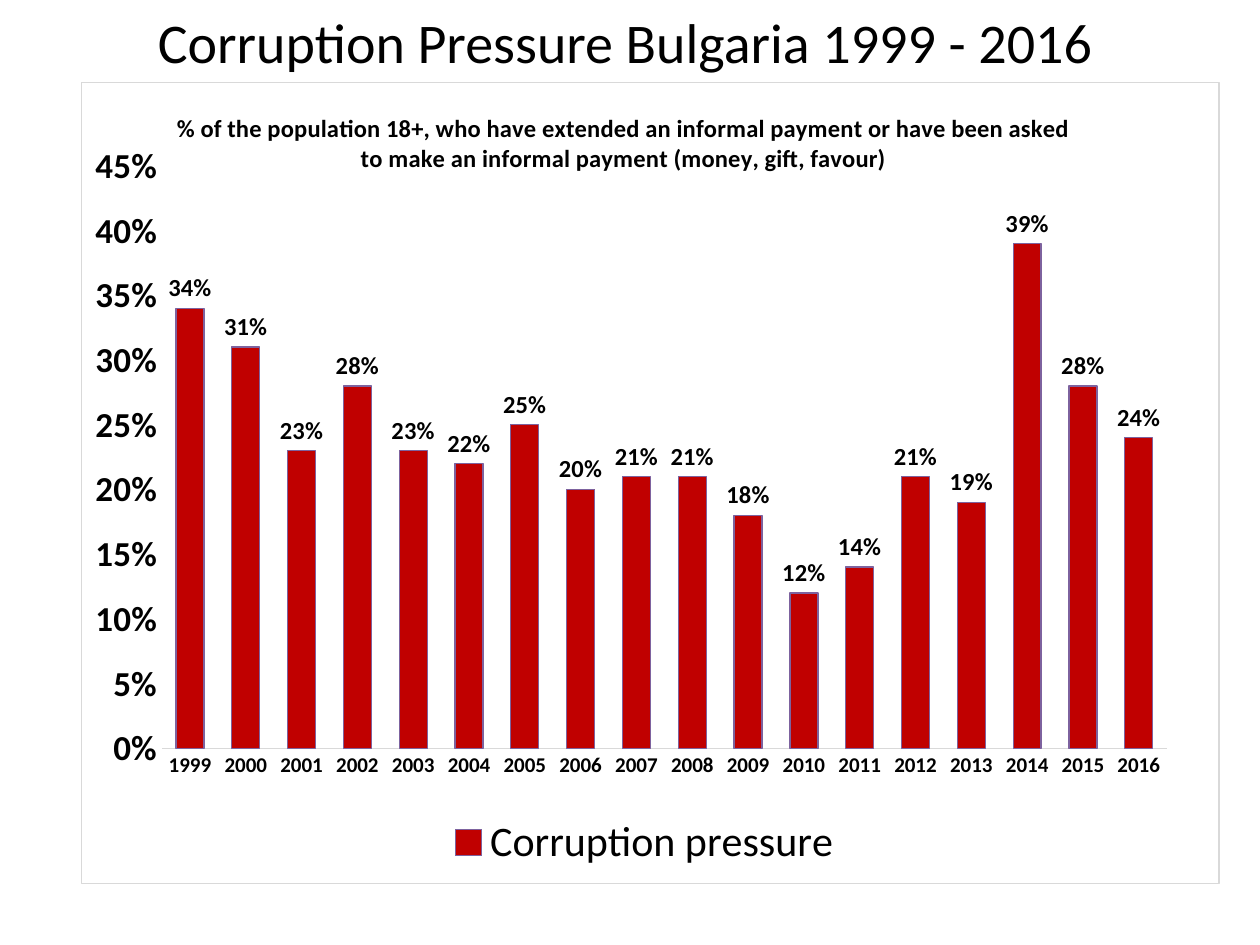
from lxml import etree
from pptx import Presentation
from pptx.chart.data import CategoryChartData
from pptx.dml.color import RGBColor
from pptx.enum import chart as ch, text
from pptx.oxml import parse_xml
from pptx.oxml.ns import nsdecls, qn
from pptx.util import Inches, Pt

FONT = "Calibri"
BLACK, GREY, RED, PURPLE = "000000", "D9D9D9", "C00000", "7D629E"
YEARS = [str(year) for year in range(1999, 2017)]
PRESSURE = [0.34, 0.31, 0.23, 0.28, 0.23, 0.22, 0.25, 0.20, 0.21,
            0.21, 0.18, 0.12, 0.14, 0.21, 0.19, 0.39, 0.28, 0.24]
QUESTION = ("% of the population 18+, who have extended an informal payment or have "
            "been asked to make an informal payment (money, gift, favour)")


def color(hex_code):
    return RGBColor.from_string(hex_code)


def set_font(font, size, bold=False):
    font.name = FONT
    font.size = Pt(size)
    font.bold = bold
    font.color.rgb = color(BLACK)


def set_line(line, hex_code):
    line.color.rgb = color(hex_code)
    line.width = Pt(0.75)


def set_layout(parent, after, target=None, **fractions):
    """Place a chart part by fractions of the chart; after is its preceding sibling."""
    for old in parent.findall(qn("c:layout")):
        parent.remove(old)
    layout = parse_xml(f"<c:layout {nsdecls('c')}><c:manualLayout/></c:layout>")
    manual = layout[0]

    def add(tag, value):
        etree.SubElement(manual, qn(f"c:{tag}")).set("val", str(value))

    if target:
        add("layoutTarget", target)
    for mode in ("xMode", "yMode"):
        add(mode, "edge")
    for tag, value in fractions.items():
        add(tag, value)
    position = 0 if after is None else parent.index(parent.find(qn(after))) + 1
    parent.insert(position, layout)


def add_title(slide, left, top, width, height):
    title = slide.shapes.title
    title.left, title.top, title.width, title.height = left, top, width, height
    frame = title.text_frame
    frame.vertical_anchor = text.MSO_ANCHOR.MIDDLE
    paragraph = frame.paragraphs[0]
    paragraph.alignment = text.PP_ALIGN.CENTER
    run = paragraph.add_run()
    run.text = "Corruption Pressure Bulgaria 1999 - 2016"
    set_font(run.font, 32)


def add_pressure_chart(slide, left, top, width, height):
    data = CategoryChartData(number_format="0%")
    data.categories = YEARS
    data.add_series("Corruption pressure", PRESSURE)
    chart = slide.shapes.add_chart(
        ch.XL_CHART_TYPE.COLUMN_CLUSTERED, left, top, width, height, data).chart
    set_font(chart.font, 11)

    # Chart heading
    chart.has_title = True
    heading = chart.chart_title
    run = heading.text_frame.paragraphs[0].add_run()
    run.text = QUESTION
    set_font(run.font, 14, bold=True)
    set_layout(heading._element, "c:tx", x=0.08, y=0.03)

    # Columns and their labels
    plot = chart.plots[0]
    plot.gap_width, plot.overlap, plot.vary_by_categories = 100, -24, False
    series = plot.series[0]
    series.format.fill.solid()
    series.format.fill.fore_color.rgb = color(RED)
    set_line(series.format.line, PURPLE)
    labels = series.data_labels
    labels.show_value = True
    labels.position = ch.XL_LABEL_POSITION.OUTSIDE_END
    labels.number_format, labels.number_format_is_linked = "0%", False
    set_font(labels.font, 14, bold=True)

    # Axes
    years, shares = chart.category_axis, chart.value_axis
    for axis, size in ((years, 12), (shares, 20)):
        axis.major_tick_mark = axis.minor_tick_mark = ch.XL_TICK_MARK.NONE
        axis.has_major_gridlines = False
        set_font(axis.tick_labels.font, size, bold=True)
    set_line(years.format.line, GREY)
    shares.format.line.fill.background()
    shares.minimum_scale, shares.maximum_scale, shares.major_unit = 0, 0.45, 0.05
    shares.tick_labels.number_format = "0%"
    shares.tick_labels.number_format_is_linked = False
    plot_area = chart._chartSpace.find(qn("c:chart")).find(qn("c:plotArea"))
    set_layout(plot_area, None, "inner", x=0.071, y=0.104, w=0.883, h=0.727)

    # Legend
    chart.has_legend = True
    legend = chart.legend
    legend.position = ch.XL_LEGEND_POSITION.RIGHT
    legend.include_in_layout = False
    set_font(legend.font, 24)
    set_layout(legend._element, "c:legendPos", x=0.32, y=0.92, w=0.35, h=0.07)

    # Border around the chart
    border = parse_xml(
        f'<c:spPr {nsdecls("c", "a")}><a:noFill/><a:ln w="{Pt(0.75)}"><a:solidFill>'
        f'<a:srgbClr val="{GREY}"/></a:solidFill></a:ln></c:spPr>')
    chart._chartSpace.find(qn("c:chart")).addnext(border)


def main():
    deck = Presentation()
    deck.slide_width, deck.slide_height = Inches(10), Inches(7.5)
    slide = deck.slides.add_slide(deck.slide_layouts[5])
    add_title(slide, Inches(0.51), Inches(0.01), Inches(8.91), Inches(0.64))
    add_pressure_chart(slide, Inches(0.64), Inches(0.65), Inches(9.04), Inches(6.37))
    deck.save("out.pptx")


if __name__ == "__main__":
    main()
